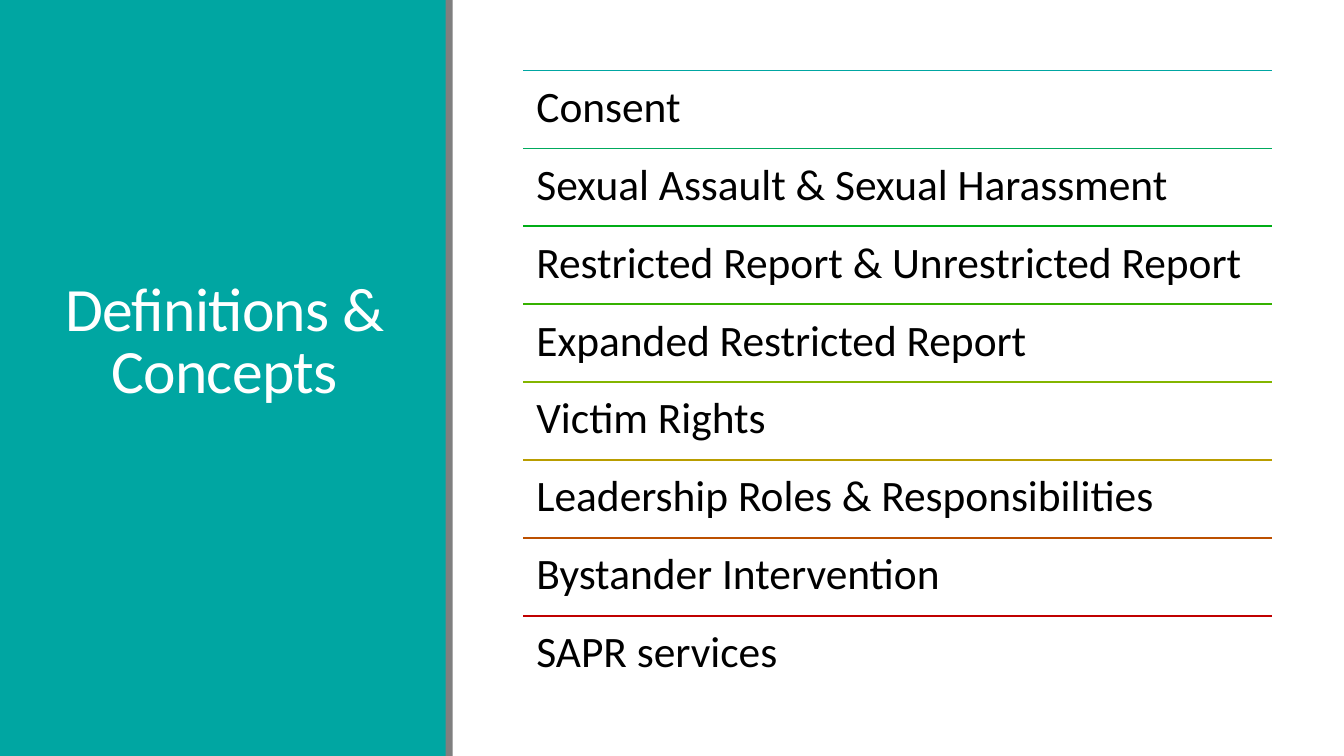
from dataclasses import dataclass

from lxml.etree import SubElement
from pptx import Presentation
from pptx.dml.color import RGBColor
from pptx.enum.shapes import MSO_CONNECTOR, MSO_SHAPE
from pptx.enum.text import MSO_ANCHOR, MSO_AUTO_SIZE, PP_ALIGN
from pptx.oxml.ns import qn
from pptx.shapes.autoshape import Shape
from pptx.shapes.placeholder import SlidePlaceholder
from pptx.slide import Slide
from pptx.util import Inches, Length, Pt

SLIDE_WIDTH = Inches(13.33)
SLIDE_HEIGHT = Inches(7.5)


@dataclass(frozen=True)
class Theme:
    font: str = "Calibri"
    panel: str = "00A6A2"
    divider: str = "7F7F7F"
    title: str = "FFFFFF"
    topic: str = "000000"
    title_size: Length = Pt(44)
    topic_size: Length = Pt(31)
    topic_line: Length = Pt(34)
    rule_width: Length = Pt(1.25)


@dataclass(frozen=True)
class Area:
    left: Length
    top: Length
    width: Length
    height: Length

    def row_top(self, row: int, rows: int) -> Length:
        return Length(self.top + self.height * row // rows)


@dataclass(frozen=True)
class Topic:
    text: str
    rule_color: str


THEME = Theme()
PANEL = Area(Inches(0), Inches(0), Inches(4.43), SLIDE_HEIGHT)
DIVIDER = Area(Inches(4.42), Inches(0), Inches(0.07), SLIDE_HEIGHT)
TITLE = Area(Inches(0.54), Inches(0.57), Inches(3.37), Inches(6.31))
AGENDA = Area(Inches(5.19), Inches(0.7), Inches(7.43), Inches(6.18))
AGENDA_INSET = Inches(0.13)
TITLE_LIFT = Inches(0.68)

TOPICS = [
    Topic("Consent", "00A6A2"),
    Topic("Sexual Assault & Sexual Harassment", "00AA5D"),
    Topic("Restricted Report & Unrestricted Report", "00AD16"),
    Topic("Expanded Restricted Report", "35B100"),
    Topic("Victim Rights", "83B500"),
    Topic("Leadership Roles & Responsibilities", "B99D00"),
    Topic("Bystander Intervention", "BC5000"),
    Topic("SAPR services", "C00000"),
]


def place(placeholder: SlidePlaceholder, area: Area) -> None:
    placeholder.left, placeholder.top = area.left, area.top
    placeholder.width, placeholder.height = area.width, area.height
    placeholder.text_frame.word_wrap = True
    placeholder.text_frame.auto_size = MSO_AUTO_SIZE.NONE


def add_block(slide: Slide, area: Area, color: str) -> Shape:
    block = slide.shapes.add_shape(
        MSO_SHAPE.RECTANGLE, area.left, area.top, area.width, area.height
    )
    block.shadow.inherit = False
    block.fill.solid()
    block.fill.fore_color.rgb = RGBColor.from_string(color)
    block.line.fill.background()
    return block


def fill_title(title: SlidePlaceholder, text: str) -> None:
    place(title, TITLE)
    frame = title.text_frame
    frame.vertical_anchor = MSO_ANCHOR.MIDDLE
    frame.margin_bottom = TITLE_LIFT
    heading = frame.paragraphs[0]
    heading.text = text
    heading.alignment = PP_ALIGN.CENTER
    heading.line_spacing = 0.85
    heading.font.name = THEME.font
    heading.font.size = THEME.title_size
    heading.font.color.rgb = RGBColor.from_string(THEME.title)
    heading.font._rPr.set("spc", "-50")


def fill_agenda(agenda: SlidePlaceholder, topics: list[Topic]) -> None:
    place(agenda, AGENDA)
    frame = agenda.text_frame
    frame.vertical_anchor = MSO_ANCHOR.TOP
    frame.margin_left = frame.margin_right = AGENDA_INSET
    frame.margin_top = frame.margin_bottom = AGENDA_INSET
    frame.text = "\n".join(topic.text for topic in topics)
    row_height = AGENDA.height // len(topics)
    for entry in frame.paragraphs:
        entry.line_spacing = THEME.topic_line
        entry.space_before = Pt(0)
        entry.space_after = Length(row_height - THEME.topic_line)
        entry.font.name = THEME.font
        entry.font.size = THEME.topic_size
        entry.font.color.rgb = RGBColor.from_string(THEME.topic)
        properties = entry._p.get_or_add_pPr()
        properties.set("marL", "0")
        properties.set("indent", "0")
        bullet = SubElement(properties, qn("a:buNone"))
        properties.find(qn("a:defRPr")).addprevious(bullet)


def add_rule(slide: Slide, top: Length, color: str) -> None:
    rule = slide.shapes.add_connector(
        MSO_CONNECTOR.STRAIGHT, AGENDA.left, top, AGENDA.left + AGENDA.width, top
    )
    rule.line.color.rgb = RGBColor.from_string(color)
    rule.line.width = THEME.rule_width
    SubElement(rule._element.spPr, qn("a:effectLst"))


def main() -> None:
    presentation = Presentation()
    presentation.slide_width = SLIDE_WIDTH
    presentation.slide_height = SLIDE_HEIGHT
    slide = presentation.slides.add_slide(presentation.slide_layouts[1])
    title, agenda = slide.placeholders

    panel = add_block(slide, PANEL, THEME.panel)
    title.element.addprevious(panel.element)
    fill_title(title, "Definitions & Concepts")
    add_block(slide, DIVIDER, THEME.divider)

    fill_agenda(agenda, TOPICS)
    for row, topic in enumerate(TOPICS):
        add_rule(slide, AGENDA.row_top(row, len(TOPICS)), topic.rule_color)

    presentation.save("out.pptx")


if __name__ == "__main__":
    main()
